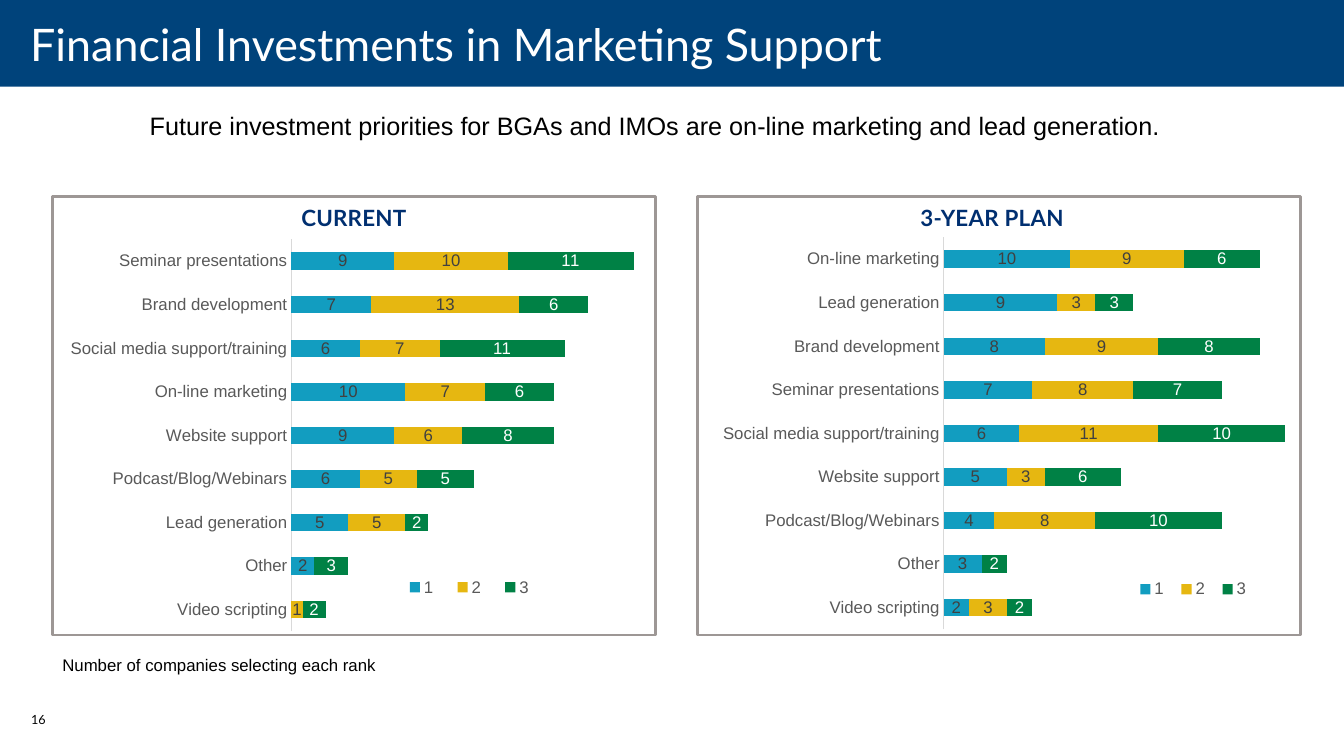
import pptx
import pptx.util
import pptx.chart.data
from pptx.dml.color import RGBColor
from pptx.enum.chart import XL_CHART_TYPE, XL_LABEL_POSITION, XL_LEGEND_POSITION, XL_TICK_MARK
from pptx.enum.shapes import MSO_SHAPE
from pptx.enum.text import MSO_ANCHOR, PP_ALIGN
from pptx.oxml import parse_xml
from pptx.oxml.ns import nsdecls
from pptx.util import Inches, Pt

BLACK = RGBColor(0x00, 0x00, 0x00)
WHITE = RGBColor(0xFF, 0xFF, 0xFF)
BAND = RGBColor(0x00, 0x43, 0x7B)
NAVY = RGBColor(0x00, 0x2F, 0x70)
FRAME = RGBColor(0x9D, 0x97, 0x95)
AXIS_LINE = RGBColor(0xD9, 0xD9, 0xD9)
AXIS_TEXT = RGBColor(0x59, 0x59, 0x59)
LABEL_TEXT = RGBColor(0x40, 0x40, 0x40)
BLUE = RGBColor(0x12, 0x9D, 0xC0)
GOLD = RGBColor(0xE6, 0xB7, 0x11)
GREEN = RGBColor(0x00, 0x81, 0x45)

TITLE = "Financial Investments in Marketing Support"
MESSAGE = "Future investment priorities for BGAs and IMOs are on-line marketing and lead generation."
NOTE = "Number of companies selecting each rank"
PAGE = "16"
RANKS = [("1", BLUE, LABEL_TEXT), ("2", GOLD, LABEL_TEXT), ("3", GREEN, WHITE)]
PANELS = [
    {
        "heading": "CURRENT", "heading_left": 0.52, "frame_left": 0.52,
        "chart": (0.21, 2.37, 6.64, 3.9), "plot": (2.89, 3.96), "max": 35,
        "legend": (3.88, 5.68, 1.55, 0.3),
        "rows": [
            ("Video scripting", 0, 1, 2),
            ("Other", 2, 0, 3),
            ("Lead generation", 5, 5, 2),
            ("Podcast/Blog/Webinars", 6, 5, 5),
            ("Website support", 9, 6, 8),
            ("On-line marketing", 10, 7, 6),
            ("Social media support/training", 6, 7, 11),
            ("Brand development", 7, 13, 6),
            ("Seminar presentations", 9, 10, 11),
        ],
    },
    {
        "heading": "3-YEAR PLAN", "heading_left": 6.85, "frame_left": 6.92,
        "chart": (6.85, 2.35, 6.4, 3.9), "plot": (9.36, 3.76), "max": 30,
        "legend": (11.19, 5.7, 1.29, 0.3),
        "rows": [
            ("Video scripting", 2, 3, 2),
            ("Other", 3, 0, 2),
            ("Podcast/Blog/Webinars", 4, 8, 10),
            ("Website support", 5, 3, 6),
            ("Social media support/training", 6, 11, 10),
            ("Seminar presentations", 7, 8, 7),
            ("Brand development", 8, 9, 8),
            ("Lead generation", 9, 3, 3),
            ("On-line marketing", 10, 9, 6),
        ],
    },
]


def apply(target, **values):
    for name, value in values.items():
        setattr(target, name, value)


def set_font(font, size, color, name="Arial", bold=False):
    apply(font, size=Pt(size), name=name, bold=bold)
    font.color.rgb = color


def add_box(s, box):
    sp = s.shapes.add_shape(MSO_SHAPE.RECTANGLE, *map(Inches, box))
    sp.shadow.inherit = False
    return sp


def add_text(s, box, text, size, color=BLACK, name="Arial", align=PP_ALIGN.LEFT, bold=False):
    tf = s.shapes.add_textbox(*map(Inches, box)).text_frame
    tf.word_wrap = True
    p = tf.paragraphs[0]
    p.alignment = align
    r = p.add_run()
    r.text = text
    set_font(r.font, size, color, name, bold)
    return tf


def add_heading(s, panel):
    tf = add_text(s, (panel["heading_left"], 1.91, 5.98, 0.44), panel["heading"], 16,
                  NAVY, "Lato", PP_ALIGN.CENTER, True)
    tf.vertical_anchor = MSO_ANCHOR.MIDDLE
    p = tf.paragraphs[0]
    apply(p, line_spacing=1.2, space_after=Pt(12.6))
    p.runs[0].font._element.set("spc", "20")


def layout_xml(box, inner=False):
    target = '<c:layoutTarget val="inner"/>' if inner else ""
    modes = "".join(f'<c:{k}Mode val="edge"/>' for k in "xy")
    sizes = "".join(f'<c:{k} val="{v:.4f}"/>' for k, v in zip("xywh", box))
    return parse_xml(f'<c:layout {nsdecls("c")}><c:manualLayout>{target}{modes}{sizes}'
                     '</c:manualLayout></c:layout>')


def add_stacked_chart(s, panel):
    left, top, width, height = panel["chart"]
    cats, *columns = zip(*panel["rows"])
    data = pptx.chart.data.CategoryChartData()
    data.categories = cats
    for (rank, _, _), values in zip(RANKS, columns):
        data.add_series(rank, values)
    chart = s.shapes.add_chart(XL_CHART_TYPE.BAR_STACKED, *map(Inches, panel["chart"]), data).chart
    chart.has_title = False
    set_font(chart.font, 10, BLACK)

    plot = chart.plots[0]
    apply(plot, gap_width=150, overlap=100, vary_by_categories=False)
    for series, (_, fill, label) in zip(plot.series, RANKS):
        series.format.fill.solid()
        series.format.fill.fore_color.rgb = fill
        labels = series.data_labels
        apply(labels, show_value=True, position=XL_LABEL_POSITION.CENTER,
              number_format="0;;;", number_format_is_linked=False)
        set_font(labels.font, 12, label)

    apply(chart.value_axis, visible=False, has_major_gridlines=False,
          minimum_scale=0, maximum_scale=panel["max"])
    axis = chart.category_axis
    apply(axis, major_tick_mark=XL_TICK_MARK.NONE, has_major_gridlines=False)
    axis.format.line.color.rgb = AXIS_LINE
    axis.format.line.width = Pt(0.75)
    set_font(axis.tick_labels.font, 12, AXIS_TEXT)

    chart.has_legend = True
    legend = chart.legend
    apply(legend, position=XL_LEGEND_POSITION.BOTTOM, include_in_layout=False)
    set_font(legend.font, 12, AXIS_TEXT)
    x, y, w, h = panel["legend"]
    for old in legend._element.findall(pptx.oxml.ns.qn("c:layout")):
        legend._element.remove(old)
    legend._element.find(pptx.oxml.ns.qn("c:legendPos")).addnext(
        layout_xml(((x - left) / width, (y - top) / height, w / width, h / height)))

    plot_left, plot_width = panel["plot"]
    area = chart._chartSpace.chart.plotArea
    for old in area.findall(pptx.oxml.ns.qn("c:layout")):
        area.remove(old)
    area.insert(0, layout_xml(((plot_left - left) / width, 0, plot_width / width, 1), True))


def main():
    prs = pptx.Presentation()
    apply(prs, slide_width=Inches(13.33), slide_height=Inches(7.5))
    s = prs.slides.add_slide(prs.slide_layouts[5])

    for panel in PANELS:
        frame = add_box(s, (panel["frame_left"], 1.95, 5.98, 4.35))
        frame.fill.background()
        frame.line.color.rgb = FRAME
        frame.line.width = Pt(2)

    band = add_box(s, (0, 0, 13.33, 0.86))
    band.fill.solid()
    band.fill.fore_color.rgb = BAND
    band.line.fill.background()

    title = s.shapes.title
    band._element.addnext(title._element)
    apply(title, left=0, top=Inches(-0.05), width=Inches(13.33), height=Inches(0.97))
    tf = title.text_frame
    tf.text = TITLE
    apply(tf, word_wrap=False, vertical_anchor=MSO_ANCHOR.MIDDLE, margin_left=Inches(0.3),
          margin_right=Inches(0.2), margin_top=0, margin_bottom=0)
    tf.paragraphs[0].alignment = PP_ALIGN.LEFT
    set_font(tf.paragraphs[0].runs[0].font, 32, WHITE, "Lato")

    for panel in PANELS:
        add_heading(s, panel)
        add_stacked_chart(s, panel)

    add_text(s, (0.33, 1.05, 12.33, 0.4), MESSAGE, 18, align=PP_ALIGN.CENTER)
    add_text(s, (0.52, 6.45, 5.82, 0.3), NOTE, 12)
    add_text(s, (0.21, 7.01, 0.49, 0.4), PAGE, 9, name="Lato")
    prs.save("out.pptx")


if __name__ == "__main__":
    main()
